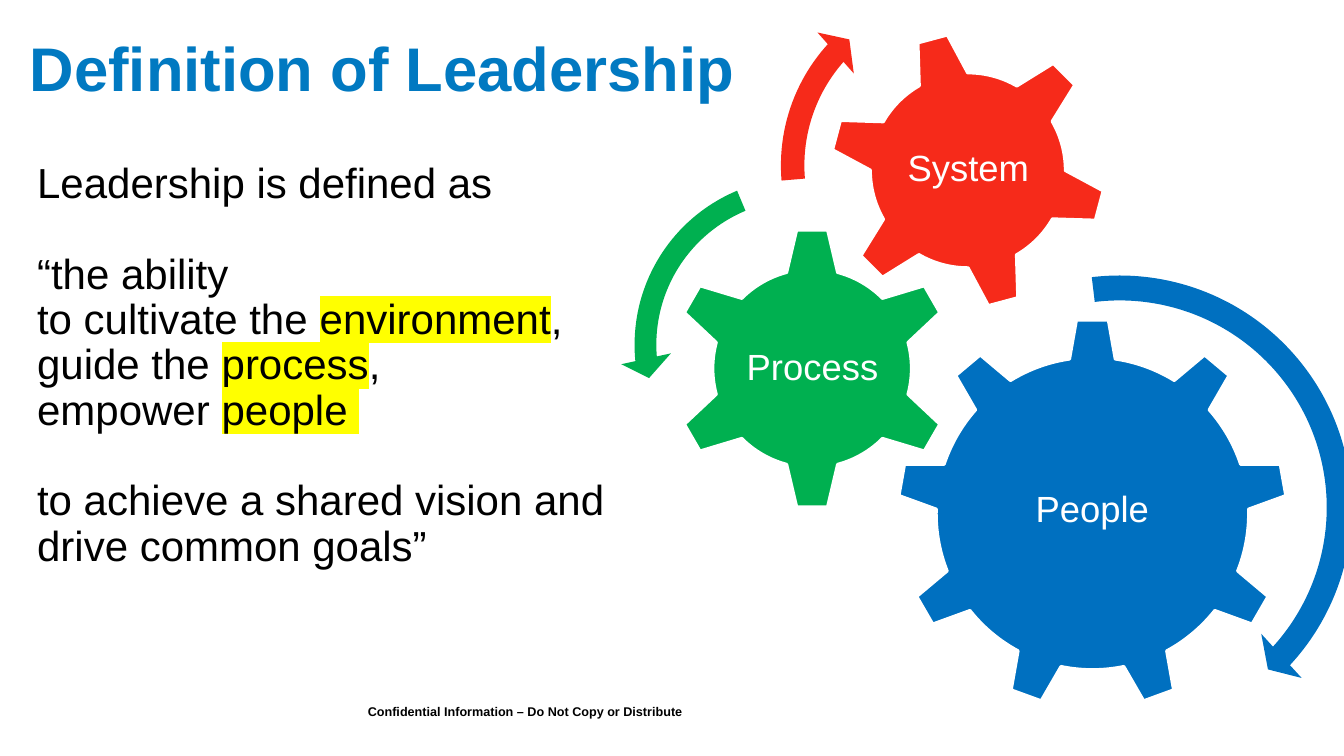
import pptx
import pptx.util
import pptx.dml.color
import pptx.enum.shapes
import pptx.enum.text
import pptx.oxml

Inches = pptx.util.Inches
Pt = pptx.util.Pt
SHAPE = pptx.enum.shapes.MSO_SHAPE
ALIGN = pptx.enum.text.PP_ALIGN
ANCHOR = pptx.enum.text.MSO_ANCHOR

COLORS = {
    "title": "0179C1", "text": "000000", "white": "FFFFFF", "marker": "FFFF00",
    "people": "0070C0", "process": "00B050", "system": "F62A1A",
}
TITLE = {"name": "Arial", "size": Pt(44), "bold": True}
BODY = {"name": "Arial", "size": Pt(30), "bold": False}
LABEL = {"name": "Arial", "size": Pt(26), "bold": False}
FOOTER = {"name": "Arial", "size": Pt(9), "bold": True}

# Each line: its spans as (text, highlighted), and whether a gap goes before it
DEFINITION = [
    ([("Leadership is defined as", False)], False),
    ([("“the ability", False)], True),
    ([("to cultivate the ", False), ("environment", True), (",", False)], False),
    ([("guide the ", False), ("process", True), (",", False)], False),
    ([("empower ", False), ("people ", True)], False),
    ([("to achieve a shared vision and drive common goals”", False)], True),
]
LINE_GAP = Pt(32.4)

# Offsets from the diagram's corner: gear left, top, size; label left, top, width, height
GEARS = [
    ("People", SHAPE.GEAR_9, (2.9, 3.16, 3.87), 0, (3.68, 4.07, 2.31, 1.99)),
    ("Process", SHAPE.GEAR_6, (0.65, 2.25, 2.81), 0, (1.36, 2.96, 1.4, 1.39)),
    ("System", SHAPE.GEAR_6, (2.22, 0.31, 2.76), 345, (2.83, 0.91, 1.55, 1.55)),
]
ARROWS = [
    ("people", SHAPE.CIRCULAR_ARROW, (2.63, 2.56, 4.95),
     (0.05, 2.99, 25.52, 157.86, 0.06)),
    ("process", SHAPE.LEFT_CIRCULAR_ARROW, (0.15, 1.62, 3.6),
     (0.06, 4.3, 104.89, 148.38, 0.07)),
    ("system", SHAPE.CIRCULAR_ARROW, (1.59, -0.3, 3.88),
     (0.06, 3.94, 133.14, 105.08, 0.07)),
]


def rgb(name):
    return pptx.dml.color.RGBColor.from_string(COLORS[name])


def add_frame(page, box):
    frame = page.shapes.add_textbox(*map(Inches, box)).text_frame
    frame.word_wrap = True
    return frame


def add_span(para, text, style, color, marked=False):
    span = para.add_run()
    span.text = text
    for key, value in style.items():
        setattr(span.font, key, value)
    span.font.color.rgb = rgb(color)
    if marked:
        highlight = pptx.oxml.parse_xml(
            '<a:highlight xmlns:a="http://schemas.openxmlformats.org/drawingml/2006/main">'
            f'<a:srgbClr val="{COLORS["marker"]}"/></a:highlight>')
        # The highlight must follow the fill
        span.font.fill._xPr.find(pptx.oxml.ns.qn("a:solidFill")).addnext(highlight)


def add_shape(page, kind, left, top, size, color):
    shape = page.shapes.add_shape(kind, *map(Inches, (left, top, size, size)))
    shape.shadow.inherit = False
    shape.fill.solid()
    shape.fill.fore_color.rgb = rgb(color)
    shape.line.fill.background()
    return shape


def draw_title(page, box):
    para = add_frame(page, box).paragraphs[0]
    para.alignment = ALIGN.CENTER
    para.line_spacing = 0.9
    add_span(para, "Definition of Leadership", TITLE, "title")


def draw_definition(page, box):
    frame = add_frame(page, box)
    for index, (spans, gap) in enumerate(DEFINITION):
        para = frame.add_paragraph() if index else frame.paragraphs[0]
        para.line_spacing = 0.9
        if gap:
            para.space_before = LINE_GAP
        for text, marked in spans:
            add_span(para, text, BODY, "text", marked)


def draw_gears(page, box):
    left, top = box[:2]
    # Gears with their labels
    for name, kind, (x, y, size), turn, (text_x, text_y, width, height) in GEARS:
        gear = add_shape(page, kind, left + x, top + y, size, name.lower())
        gear.rotation = turn
        gear.line.color.rgb = rgb("white")
        gear.line.width = Pt(2)
        frame = add_frame(page, (left + text_x, top + text_y, width, height))
        frame.vertical_anchor = ANCHOR.MIDDLE
        for side in ("left", "top", "right", "bottom"):
            setattr(frame, f"margin_{side}", Inches(0.04))
        para = frame.paragraphs[0]
        para.alignment = ALIGN.CENTER
        para.line_spacing = 0.9
        add_span(para, name, LABEL, "white")
    # Arrows showing which way each gear turns
    for color, kind, (x, y, size), bends in ARROWS:
        arrow = add_shape(page, kind, left + x, top + y, size, color)
        for index, bend in enumerate(bends):
            arrow.adjustments[index] = bend


def draw_footer(page, box):
    para = add_frame(page, box).paragraphs[0]
    para._p.get_or_add_pPr().set("marL", str(Inches(2.99)))
    add_span(para, "Confidential Information – Do Not Copy or Distribute", FOOTER, "text")


def main():
    deck = pptx.Presentation()
    deck.slide_width, deck.slide_height = Inches(13.33), Inches(7.5)
    page = deck.slides.add_slide(deck.slide_layouts[6])
    draw_footer(page, (0.56, 6.93, 9.44, 0.25))
    draw_gears(page, (6, 0, 7.33, 7.5))
    draw_title(page, (-1.33, 0.33, 10.25, 1.5))
    draw_definition(page, (0.27, 1.56, 6.23, 4.37))
    deck.save("out.pptx")


if __name__ == "__main__":
    main()
